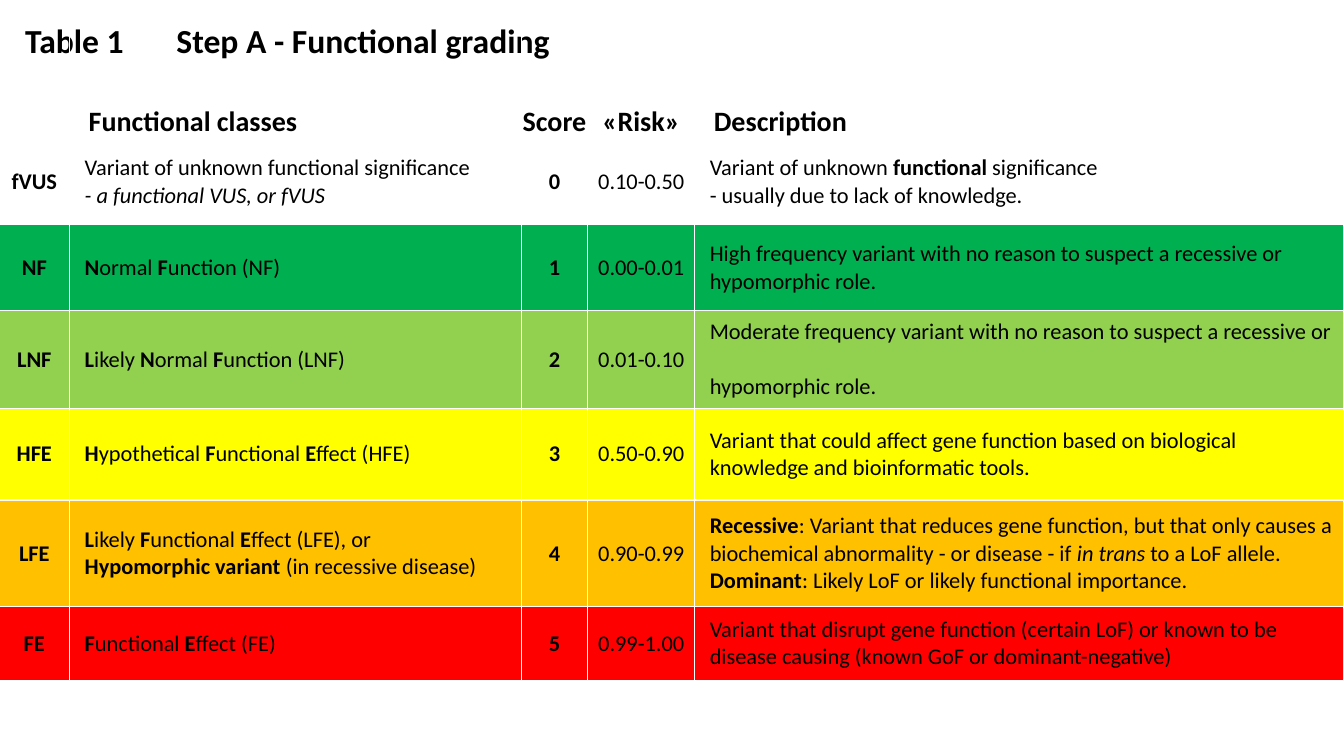
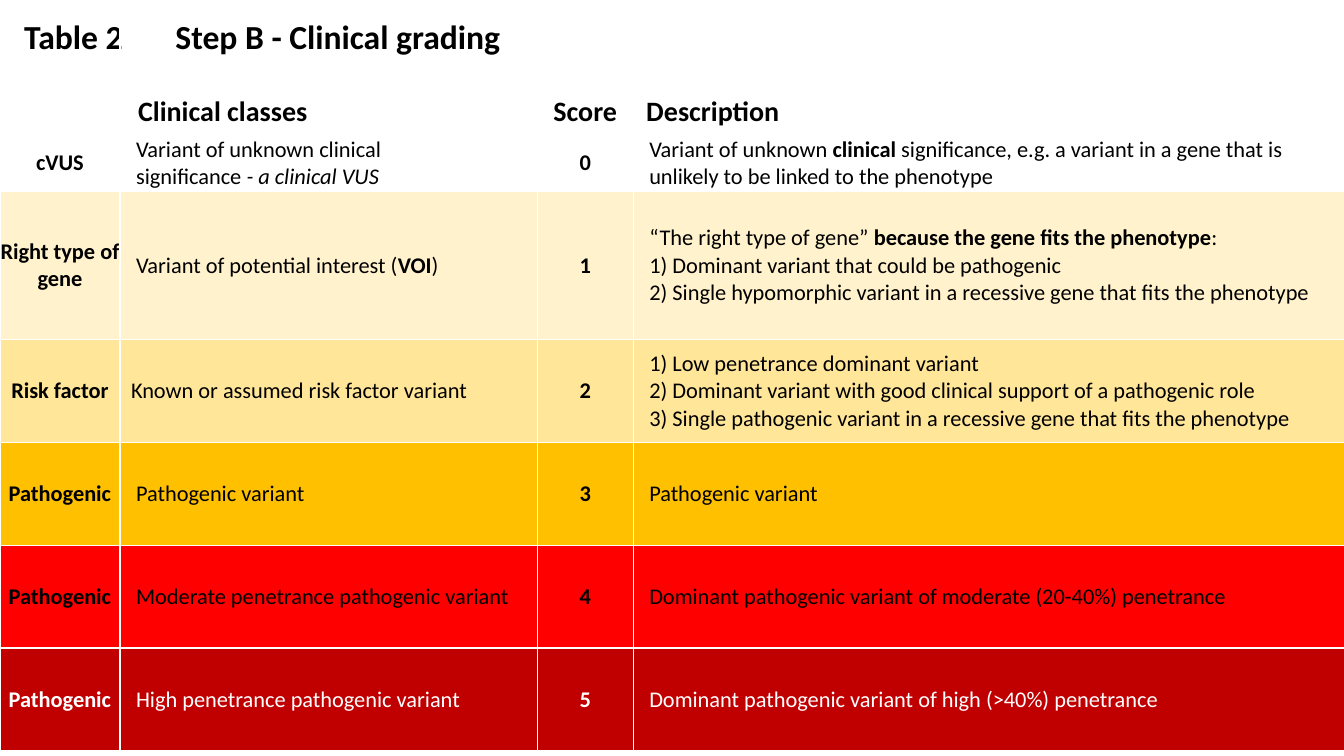
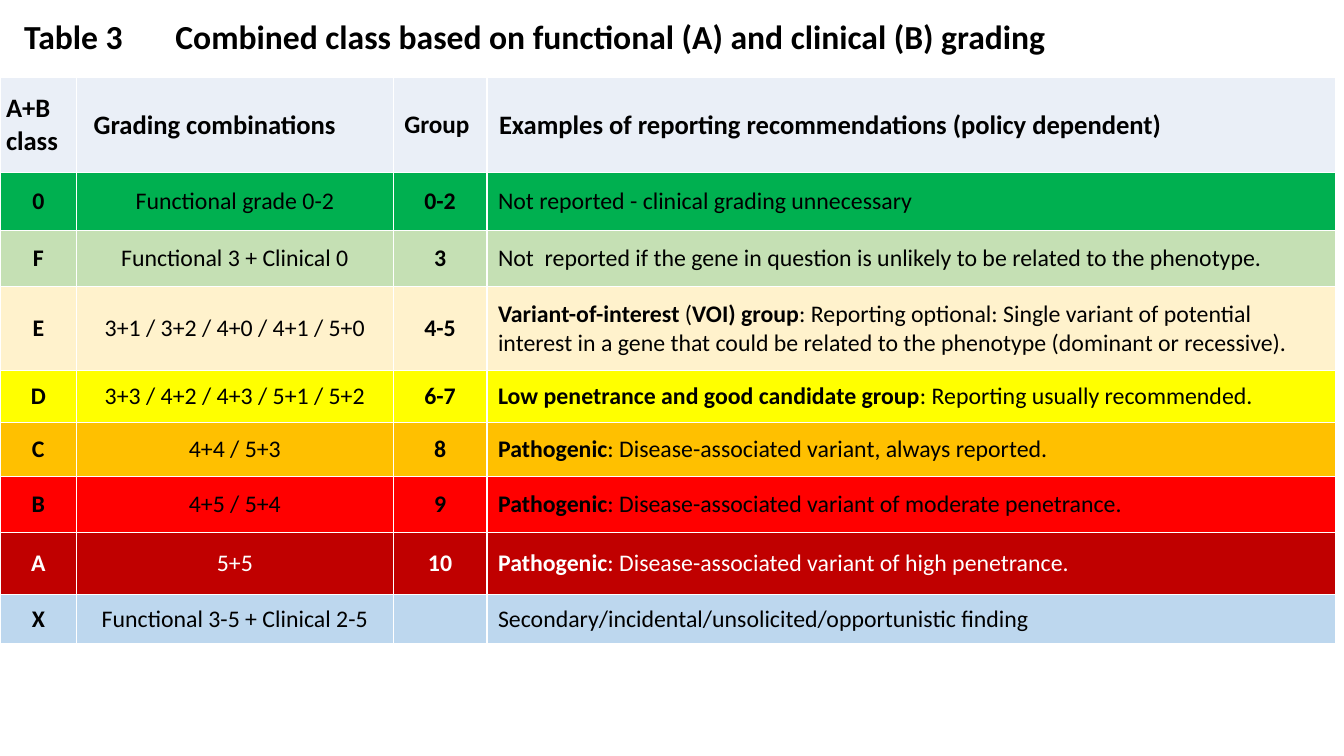
from dataclasses import dataclass
from itertools import product

from lxml import etree
from pptx import Presentation
from pptx.dml import color
from pptx.enum import text
from pptx.oxml import ns
from pptx.util import Inches, Pt

FONT = "Calibri"
BLACK, WHITE = "000000", "FFFFFF"
GREEN, LIME, PALE_GREEN = "00B050", "92D050", "C5E0B4"
YELLOW, AMBER, RED, DARK_RED = "FFFF00", "FFC000", "FF0000", "C00000"
CREAM, SAND, ICE, BLUE = "FFF2CC", "FFE699", "EAEFF7", "BDD7EE"


@dataclass
class Column:
    width: float
    head_indent: float = 0
    indent: float = 0
    bold: bool = False
    head_size: float = 20


@dataclass
class Row:
    height: float
    fill: str
    words: list
    head: bool = False


def rgb(value):
    return color.RGBColor.from_string(value)


def add_span(para, words, size, ink=BLACK, bold=False, italic=False):
    span = para.add_run()
    span.text = words
    font = span.font
    font.name, font.size, font.bold, font.italic = FONT, Pt(size), bold, italic
    font.color.rgb = rgb(ink)


def write_marked(para, words, bold=False, **style):
    for i, strong in enumerate(words.split("*")):
        for j, piece in enumerate(strong.split("_")):
            if piece:
                add_span(para, piece, bold=bold != (i % 2 == 1),
                         italic=j % 2 == 1, **style)


def outline_cell(cell):
    properties = cell._tc.get_or_add_tcPr()
    for edge in ("a:lnL", "a:lnR", "a:lnT", "a:lnB"):
        line = etree.SubElement(properties, ns.qn(edge), w=str(Pt(1)))
        paint = etree.SubElement(line, ns.qn("a:solidFill"))
        etree.SubElement(paint, ns.qn("a:srgbClr"), val=WHITE)


def fill_cell(cell, row, column, words, size):
    indent = column.head_indent if row.head else column.indent
    cell.margin_left = Inches(indent)
    cell.margin_right = cell.margin_top = cell.margin_bottom = 0
    cell.vertical_anchor = text.MSO_ANCHOR.MIDDLE
    outline_cell(cell)
    if row.fill:
        cell.fill.solid()
        cell.fill.fore_color.rgb = rgb(row.fill)
    else:
        cell.fill.background()
    frame = cell.text_frame
    for number, line in enumerate(words.split("\n")):
        para = frame.add_paragraph() if number else frame.paragraphs[0]
        para.alignment = text.PP_ALIGN.LEFT if indent else text.PP_ALIGN.CENTER
        write_marked(para, line, bold=row.head or column.bold,
                     size=column.head_size if row.head else size,
                     ink=WHITE if row.fill == DARK_RED else BLACK)


def add_grid(page, left, top, columns, rows, size):
    width = sum(column.width for column in columns)
    height = sum(row.height for row in rows)
    table = page.shapes.add_table(len(rows), len(columns), Inches(left),
                                  Inches(top), Inches(width),
                                  Inches(height)).table
    table.first_row = table.horz_banding = False
    for track, column in zip(table.columns, columns):
        track.width = Inches(column.width)
    for track, row in zip(table.rows, rows):
        track.height = Inches(row.height)
    for (r, row), (c, column) in product(enumerate(rows), enumerate(columns)):
        fill_cell(table.cell(r, c), row, column, row.words[c], size)
    return table


def add_page(deck, title, left, top, width):
    page = deck.slides.add_slide(deck.slide_layouts[5])
    box = page.shapes.title
    box.left, box.top = Inches(left), Inches(top)
    box.width, box.height = Inches(width), Inches(0.5)
    frame = box.text_frame
    frame.word_wrap = True
    frame.auto_size = text.MSO_AUTO_SIZE.NONE
    frame.vertical_anchor = text.MSO_ANCHOR.MIDDLE
    para = frame.paragraphs[0]
    para.alignment = text.PP_ALIGN.LEFT
    add_span(para, title, 24, bold=True)
    return page


def add_functional_page(deck):
    page = add_page(deck, "Table 1 \tStep A - Functional grading", 0.15, 0.15, 5.96)
    columns = [Column(0.7, bold=True), Column(4.48, 0.19, 0.15),
               Column(0.66, bold=True), Column(1.06), Column(6.44, 0.19, 0.15)]
    rows = [
        Row(0.97, "", [""] * 5, head=True),
        Row(0.34, "", ["", "Functional classes", "Score", "«Risk»",
                       "Description"], head=True),
        Row(0.85, "", ["fVUS", "Variant of unknown functional significance\n"
                       "_- a functional VUS, or fVUS_", "0", "0.10-0.50",
                       "Variant of unknown *functional* significance\n"
                       "- usually due to lack of knowledge."]),
        Row(0.85, GREEN, ["NF", "*N*ormal *F*unction (NF)", "1", "0.00-0.01",
                          "High frequency variant with no reason to suspect a recessive or\n"
                          "hypomorphic role."]),
        Row(0.97, LIME, ["LNF", "*L*ikely *N*ormal *F*unction (LNF)", "2", "0.01-0.10",
                         "Moderate frequency variant with no reason to suspect a recessive or\n"
                         "hypomorphic role."]),
        Row(0.91, YELLOW, ["HFE", "*H*ypothetical *F*unctional *E*ffect (HFE)", "3",
                           "0.50-0.90",
                           "Variant that could affect gene function based on biological\n"
                           "knowledge and bioinformatic tools."]),
        Row(1.06, AMBER, ["LFE", "*L*ikely *F*unctional *E*ffect (LFE), or\n"
                          "*Hypomorphic variant* (in recessive disease)", "4", "0.90-0.99",
                          "*Recessive*: Variant that reduces gene function, but that only causes a\n"
                          "biochemical abnormality - or disease - if _in trans_ to a LoF allele.\n"
                          "*Dominant*: Likely LoF or likely functional importance."]),
        Row(0.73, RED, ["FE", "*F*unctional *E*ffect (FE)", "5", "0.99-1.00",
                        "Variant that disrupt gene function (certain LoF) or known to be\n"
                        "disease causing (known GoF or dominant-negative)"]),
    ]
    table = add_grid(page, -0.01, 0.07, columns, rows, 16)
    table.cell(4, 4).text_frame.paragraphs[1].space_before = Pt(19.5)


def add_clinical_page(deck):
    page = add_page(deck, "Table 2 \tStep B - Clinical grading", 0.14, 0.11, 5.47)
    columns = [Column(1.19, bold=True), Column(4.14, 0.18, 0.16),
               Column(0.95, bold=True), Column(7.06, 0.13, 0.16)]
    rows = [
        Row(0.78, "", [""] * 4, head=True),
        Row(0.45, "", ["", "Clinical classes", "Score", "Description"], head=True),
        Row(0.56, "", ["cVUS", "Variant of unknown clinical\n"
                       "significance _- a clinical VUS_", "0",
                       "Variant of unknown *clinical* significance, e.g. a variant in a gene that is\n"
                       "unlikely to be linked to the phenotype"]),
        Row(1.47, CREAM, ["Right type of gene", "Variant of potential interest (*VOI*)", "1",
                          "“The right type of gene” *because the gene fits the phenotype*:\n"
                          "1) Dominant variant that could be pathogenic\n"
                          "2) Single hypomorphic variant in a recessive gene that fits the phenotype"]),
        Row(1.02, SAND, ["Risk factor", "Known or assumed risk factor variant", "2",
                         "1) Low penetrance dominant variant\n"
                         "2) Dominant variant with good clinical support of a pathogenic role\n"
                         "3) Single pathogenic variant in a recessive gene that fits the phenotype"]),
        Row(1.02, AMBER, ["Pathogenic", "Pathogenic variant", "3", "Pathogenic variant"]),
        Row(1.02, RED, ["Pathogenic", "Moderate penetrance pathogenic variant", "4",
                        "Dominant pathogenic variant of moderate (20-40%) penetrance"]),
        Row(1.02, DARK_RED, ["Pathogenic", "High penetrance pathogenic variant", "5",
                             "Dominant pathogenic variant of high (>40%) penetrance"]),
    ]
    table = add_grid(page, 0, 0.11, columns, rows, 16)
    table.cell(4, 1).margin_left = Inches(0.11)


def add_combined_page(deck):
    page = add_page(deck, "Table 3 \tCombined class based on functional (A) "
                    "and clinical (B) grading", 0.14, 0.11, 10.94)
    columns = [Column(0.76, 0.06, bold=True, head_size=19),
               Column(3.14, 0.17, head_size=19),
               Column(0.93, 0.11, bold=True, head_size=18),
               Column(8.42, 0.12, 0.11, head_size=19)]
    rows = [
        Row(0.94, ICE, ["A+B\nclass", "Grading combinations", "Group",
                        "Examples of reporting recommendations (policy dependent)"],
            head=True),
        Row(0.58, GREEN, ["0", "Functional grade 0-2", "0-2",
                          "Not reported - clinical grading unnecessary"]),
        Row(0.55, PALE_GREEN, ["F", "Functional 3 + Clinical 0", "3",
                               "Not  reported if the gene in question is unlikely "
                               "to be related to the phenotype."]),
        Row(0.84, CREAM, ["E", "3+1 / 3+2 / 4+0 / 4+1 / 5+0", "4-5",
                          "*Variant-of-interest* (*VOI) group*: Reporting optional: "
                          "Single variant of potential\n"
                          "interest in a gene that could be related to the phenotype "
                          "(dominant or recessive)."]),
        Row(0.51, YELLOW, ["D", "3+3 / 4+2 / 4+3 / 5+1 / 5+2", "6-7",
                           "*Low penetrance and good candidate group*: "
                           "Reporting usually recommended."]),
        Row(0.54, AMBER, ["C", "4+4 / 5+3", "8",
                          "*Pathogenic*: Disease-associated variant, always reported."]),
        Row(0.55, RED, ["B", "4+5 / 5+4", "9",
                        "*Pathogenic*: Disease-associated variant of moderate penetrance."]),
        Row(0.62, DARK_RED, ["A", "5+5", "10",
                             "*Pathogenic*: Disease-associated variant of high penetrance."]),
        Row(0.49, BLUE, ["X", "Functional 3-5 + Clinical 2-5", "",
                         "Secondary/incidental/unsolicited/opportunistic finding"]),
    ]
    add_grid(page, 0, 0.77, columns, rows, 17)


def main():
    deck = Presentation()
    deck.slide_width, deck.slide_height = Inches(13.33), Inches(7.5)
    add_functional_page(deck)
    add_clinical_page(deck)
    add_combined_page(deck)
    deck.save("out.pptx")


if __name__ == "__main__":
    main()
